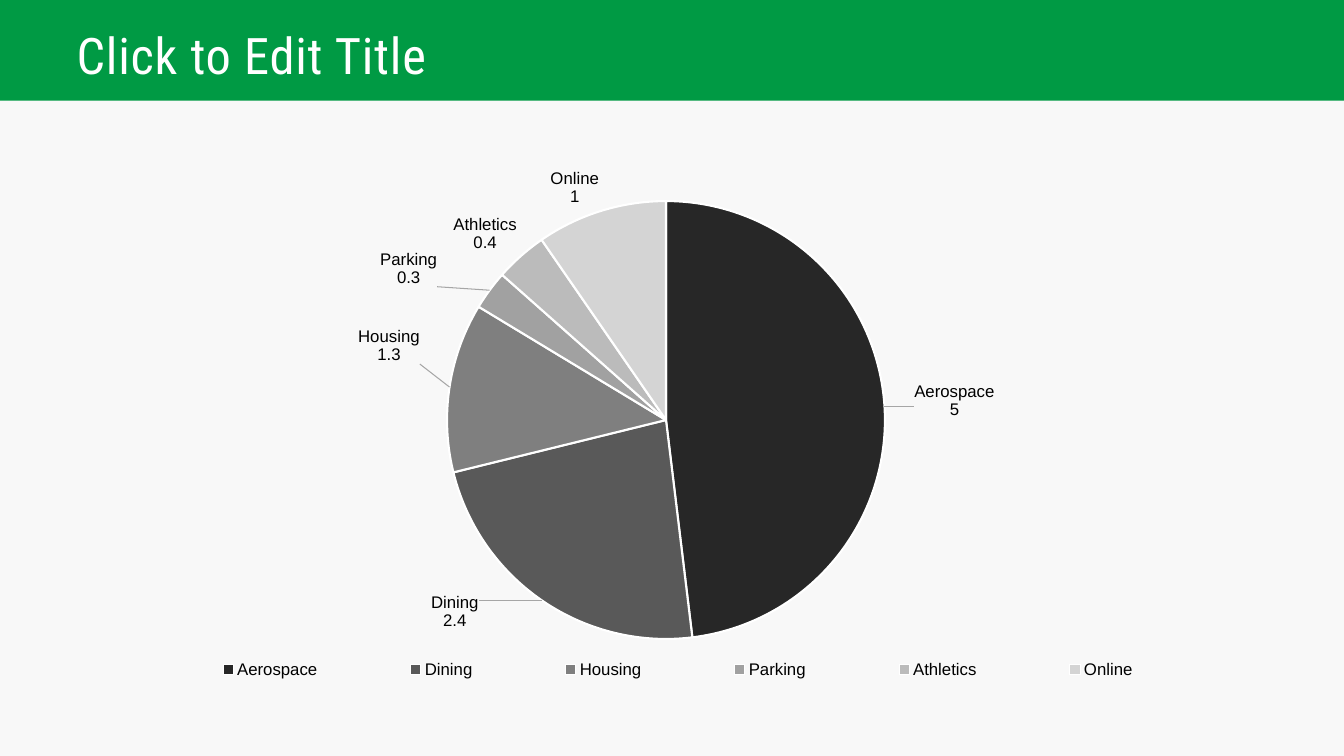
from copy import deepcopy
from dataclasses import dataclass

from lxml import etree
from pptx import Presentation
from pptx.chart.data import CategoryChartData
from pptx.dml.color import RGBColor
from pptx.enum.chart import XL_CHART_TYPE, XL_LABEL_POSITION, XL_LEGEND_POSITION
from pptx.enum.shapes import MSO_SHAPE
from pptx.enum.text import MSO_ANCHOR, MSO_AUTO_SIZE, PP_ALIGN
from pptx.oxml import parse_xml
from pptx.oxml.ns import nsdecls, qn
from pptx.util import Cm, Pt

PIE = XL_CHART_TYPE.PIE
OUTSIDE_END = XL_LABEL_POSITION.OUTSIDE_END
LEGEND_BOTTOM = XL_LEGEND_POSITION.BOTTOM
RECTANGLE = MSO_SHAPE.RECTANGLE
MIDDLE = MSO_ANCHOR.MIDDLE
NO_AUTOFIT = MSO_AUTO_SIZE.NONE
LEFT = PP_ALIGN.LEFT


@dataclass(frozen=True)
class Theme:
    background: str = "F8F8F8"
    band: str = "009A44"
    title: str = "FFFFFF"
    text: str = "000000"
    slice_edge: str = "FFFFFF"
    leader: str = "A6A6A6"
    title_font: str = "Roboto Condensed"
    chart_font: str = "Arial"
    title_size: int = 36
    chart_size: int = 10
    label_size: int = 12
    title_tracking: int = 60


THEME = Theme()
SLIDE_WIDTH, SLIDE_HEIGHT = Cm(33.87), Cm(19.05)
BAND_HEIGHT = Cm(2.54)

# category, value, slice colour, label shift as a share of the chart
SLICES = [
    ("Aerospace", 5, "272727", (0.02, -0.01)),
    ("Dining", 2.4, "595959", (-0.05, -0.02)),
    ("Housing", 1.3, "7F7F7F", (-0.02, -0.04)),
    ("Parking", 0.3, "A1A1A1", (-0.04, 0)),
    ("Athletics", 0.4, "BBBBBB", None),
    ("Online", 1, "D4D4D4", None),
]


def rgb(value):
    return RGBColor.from_string(value)


def style_font(font, name, size, color):
    font.name = name
    font.size = Pt(size)
    font.color.rgb = rgb(color)


def manual_layout(x, y, width=None, height=None, inner=False):
    """Return a c:layout; without a size, x and y are shifts."""
    parts = ['<c:layoutTarget val="inner"/>'] if inner else []
    if width is not None:
        parts += ['<c:xMode val="edge"/>', '<c:yMode val="edge"/>']
    values = zip("xywh", (x, y, width, height))
    parts += [f'<c:{tag} val="{value}"/>' for tag, value in values if value is not None]
    return parse_xml(
        f'<c:layout {nsdecls("c")}><c:manualLayout>{"".join(parts)}'
        "</c:manualLayout></c:layout>"
    )


def add_band(slide, title):
    """Add the green header band behind the title."""
    band = slide.shapes.add_shape(RECTANGLE, 0, 0, SLIDE_WIDTH, BAND_HEIGHT)
    band.shadow.inherit = False
    band.fill.solid()
    band.fill.fore_color.rgb = rgb(THEME.band)
    band.line.fill.background()
    title.element.addprevious(band.element)


def fill_title(title, wording):
    title.left, title.top = Cm(1.93), 0
    title.width, title.height = Cm(25.4), BAND_HEIGHT
    frame = title.text_frame
    frame.auto_size = NO_AUTOFIT
    frame.word_wrap = True
    frame.vertical_anchor = MIDDLE
    frame.margin_left = frame.margin_right = frame.margin_bottom = 0
    frame.margin_top = Cm(0.38)
    paragraph = frame.paragraphs[0]
    paragraph.alignment = LEFT
    paragraph.line_spacing = 0.9
    run = paragraph.add_run()
    run.text = wording
    style_font(run.font, THEME.title_font, THEME.title_size, THEME.title)
    for properties in title.element.iter(qn("a:rPr")):
        properties.set("spc", str(THEME.title_tracking))


def add_leader_lines(labels_xml):
    for old in labels_xml.findall(qn("c:showLeaderLines")):
        labels_xml.remove(old)
    etree.SubElement(labels_xml, qn("c:showLeaderLines")).set("val", "1")
    labels_xml.append(parse_xml(
        f'<c:leaderLines {nsdecls("c", "a")}><c:spPr><a:ln w="9525"><a:solidFill>'
        f'<a:srgbClr val="{THEME.leader}"/></a:solidFill></a:ln></c:spPr></c:leaderLines>'
    ))


def label_slices(chart):
    """Label each slice with category and value, shifting some labels."""
    labels = chart.plots[0].series[0].data_labels
    labels.show_category_name = True
    labels.show_value = True
    labels.show_percentage = False
    labels.position = OUTSIDE_END
    style_font(labels.font, THEME.chart_font, THEME.label_size, THEME.text)

    labels_xml = next(chart.element.iter(qn("c:dLbls")))
    separator = etree.Element(qn("c:separator"))
    separator.text = "\n"
    labels_xml.find(qn("c:showBubbleSize")).addnext(separator)
    add_leader_lines(labels_xml)

    shared = [
        part for part in labels_xml
        if part.tag not in (qn("c:showLeaderLines"), qn("c:leaderLines"))
    ]
    shifted = [(i, row[3]) for i, row in enumerate(SLICES) if row[3]]
    for position, (index, shift) in enumerate(shifted):
        label = parse_xml(f'<c:dLbl {nsdecls("c")}><c:idx val="{index}"/></c:dLbl>')
        label.append(manual_layout(*shift))
        label.extend([deepcopy(part) for part in shared])
        labels_xml.insert(position, label)


def add_legend(chart):
    chart.has_legend = True
    legend = chart.legend
    legend.position = LEGEND_BOTTOM
    legend.include_in_layout = False
    style_font(legend.font, THEME.chart_font, THEME.label_size, THEME.text)
    legend_xml = next(chart.element.iter(qn("c:legend")))
    for old in legend_xml.findall(qn("c:layout")):
        legend_xml.remove(old)
    legend_xml.find(qn("c:legendPos")).addnext(manual_layout(0.05, 0.9, 0.91, 0.07))


def add_pie(slide):
    data = CategoryChartData()
    data.categories = [row[0] for row in SLICES]
    data.add_series("Series 1", [row[1] for row in SLICES])
    chart = slide.shapes.add_chart(
        PIE, Cm(1.91), Cm(3.81), Cm(30.05), Cm(13.97), data
    ).chart
    chart.has_title = False
    style_font(chart.font, THEME.chart_font, THEME.chart_size, THEME.text)

    plot = chart.plots[0]
    plot.vary_by_categories = True
    for index, (_, _, color, _) in enumerate(SLICES):
        piece = plot.series[0].points[index].format
        piece.fill.solid()
        piece.fill.fore_color.rgb = rgb(color)
        piece.line.color.rgb = rgb(THEME.slice_edge)
        piece.line.width = Pt(1.5)
    label_slices(chart)
    add_legend(chart)

    plot_area = next(chart.element.iter(qn("c:plotArea")))
    for old in plot_area.findall(qn("c:layout")):
        plot_area.remove(old)
    plot_area.insert(0, manual_layout(0.31, 0.09, 0.37, 0.79, inner=True))


def main():
    deck = Presentation()
    deck.slide_width, deck.slide_height = SLIDE_WIDTH, SLIDE_HEIGHT
    slide = deck.slides.add_slide(deck.slide_layouts.get_by_name("Title Only"))
    slide.background.fill.solid()
    slide.background.fill.fore_color.rgb = rgb(THEME.background)
    title = slide.shapes.title
    add_band(slide, title)
    fill_title(title, "Click to Edit Title")
    add_pie(slide)
    deck.save("out.pptx")


if __name__ == "__main__":
    main()
